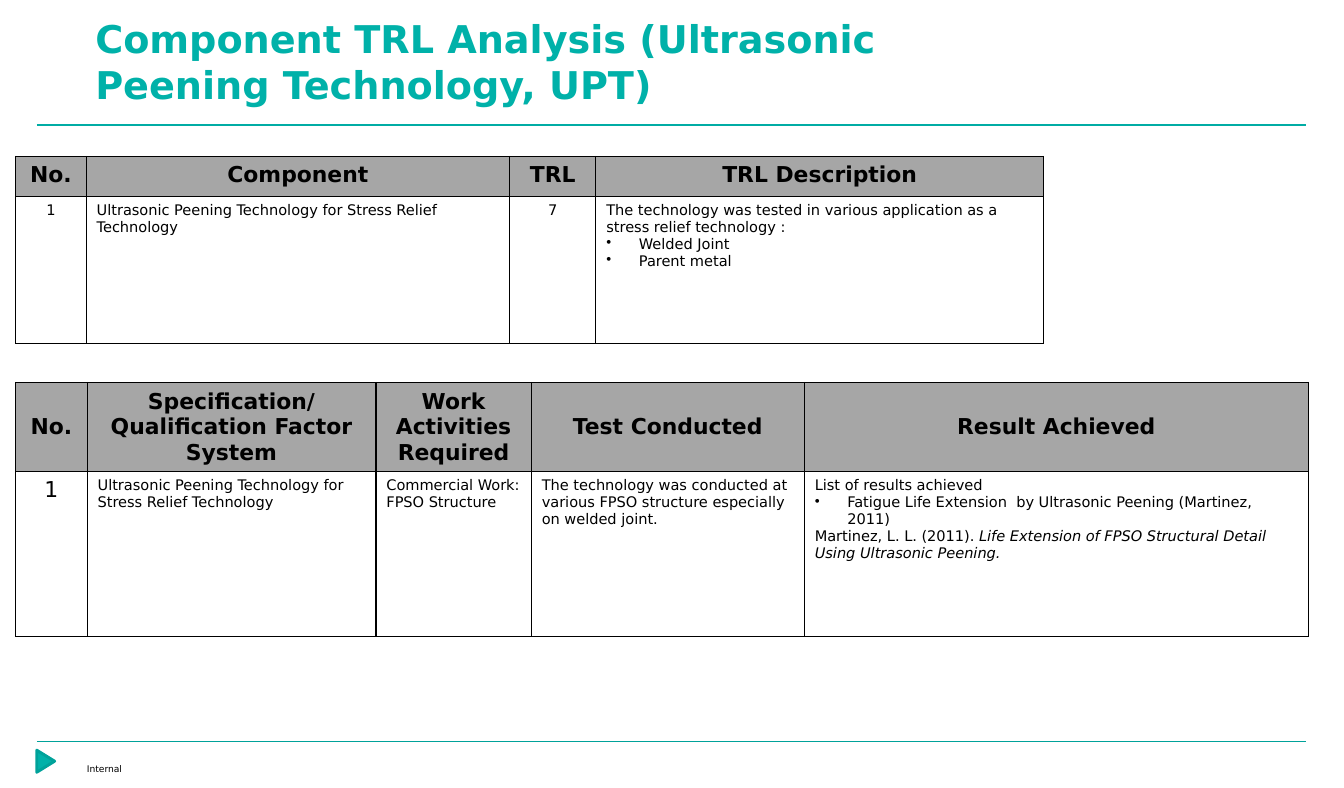
import pptx
import pptx.util
import pptx.dml.color
import pptx.enum.shapes
import pptx.enum.text
import pptx.oxml.ns
import lxml.etree

RGBColor = pptx.dml.color.RGBColor
Align = pptx.enum.text.PP_ALIGN
Anchor = pptx.enum.text.MSO_ANCHOR
qn = pptx.oxml.ns.qn

TEAL = RGBColor(0x00, 0xB1, 0xA9)
DARK_TEAL = RGBColor(0x00, 0xA2, 0x9A)
RULE_TEAL = RGBColor(0x00, 0xAC, 0xA4)
BLACK = RGBColor(0x00, 0x00, 0x00)
GRAY = RGBColor(0xA6, 0xA6, 0xA6)
FONT = "DejaVu Sans"

WIDTH = pptx.util.Inches(12.8)
HEIGHT = pptx.util.Inches(7.5)
COLUMN = WIDTH / 128
ROW = HEIGHT / 75
BULLET_INDENT = pptx.util.Inches(0.31)


def grid_box(left, top, width, height):
    return (round(left * COLUMN), round(top * ROW),
            round(width * COLUMN), round(height * ROW))


def add_bullet(paragraph):
    properties = paragraph._p.get_or_add_pPr()
    properties.set("marL", str(BULLET_INDENT))
    properties.set("indent", str(-BULLET_INDENT))
    lxml.etree.SubElement(properties, qn("a:buChar")).set("char", "•")


def write_text(paragraph, text, size=10, color=BLACK, bold=False,
               align=Align.LEFT, bullet=False, italic_tail=""):
    if bullet:
        add_bullet(paragraph)
    paragraph.alignment = align
    for content, italic in ((text, False), (italic_tail, True)):
        if content:
            run = paragraph.add_run()
            run.text = content
            run.font.name = FONT
            run.font.size = pptx.util.Pt(size)
            run.font.color.rgb = color
            run.font.bold = bold
            run.font.italic = italic


def add_label(slide, box, text, anchor=Anchor.TOP, **text_format):
    frame = slide.shapes.add_textbox(*box).text_frame
    frame.word_wrap = True
    frame.vertical_anchor = anchor
    write_text(frame.paragraphs[0], text, **text_format)


def add_rule(slide, box, color):
    left, top, width, height = box
    rule = slide.shapes.add_connector(
        pptx.enum.shapes.MSO_CONNECTOR.STRAIGHT, left, top, left + width, top + height)
    rule.line.color.rgb = color
    rule.line.width = pptx.util.Pt(0.75)
    lxml.etree.SubElement(rule._element.spPr, qn("a:effectLst"))


def add_borders(cell):
    properties = cell._tc.get_or_add_tcPr()
    for side in ("lnL", "lnR", "lnT", "lnB"):
        border = lxml.etree.SubElement(properties, qn("a:" + side))
        border.set("w", str(pptx.util.Pt(1)))
        fill = lxml.etree.SubElement(border, qn("a:solidFill"))
        lxml.etree.SubElement(fill, qn("a:srgbClr")).set("val", str(BLACK))


def fill_cell(cell, items, anchor=Anchor.TOP, color=None):
    add_borders(cell)
    if color is None:
        cell.fill.background()
    else:
        cell.fill.solid()
        cell.fill.fore_color.rgb = color
    cell.vertical_anchor = anchor
    frame = cell.text_frame
    for index, (text, text_format) in enumerate(items):
        paragraph = frame.add_paragraph() if index else frame.paragraphs[0]
        write_text(paragraph, text, **text_format)


def add_trl_table(slide, box, columns, rows, headings, contents, heading_anchor):
    table = slide.shapes.add_table(len(rows), len(columns), *box).table
    table.first_row = False
    table.horz_banding = False
    for column, share in zip(table.columns, columns):
        column.width = round(box[2] * share / sum(columns))
    for row, share in zip(table.rows, rows):
        row.height = round(box[3] * share / sum(rows))
    heading_format = dict(size=15, bold=True, align=Align.CENTER)
    for index, (heading, items) in enumerate(zip(headings, contents)):
        fill_cell(table.cell(0, index), [(heading, heading_format)], heading_anchor, GRAY)
        fill_cell(table.cell(1, index), items)


def add_header(slide, box):
    left, top, width, height = box
    add_label(slide, (left + round(4.6 * COLUMN), top, round(90 * COLUMN), round(height * 0.95)),
              "Component TRL Analysis (Ultrasonic Peening Technology, UPT)",
              anchor=Anchor.MIDDLE, size=26.2, color=TEAL, bold=True)
    add_rule(slide, (left, top + height, width, 0), RULE_TEAL)


def add_footer(slide, box):
    left, top, width, height = box
    add_rule(slide, (left, top, width, 0), DARK_TEAL)
    marker = slide.shapes.add_shape(
        pptx.enum.shapes.MSO_SHAPE.ISOSCELES_TRIANGLE,
        left - round(0.2 * COLUMN), top + round(ROW),
        round(2.1 * COLUMN), round(1.7 * ROW))
    marker.rotation = 90
    marker.shadow.inherit = False
    marker.fill.solid()
    marker.fill.fore_color.rgb = TEAL
    marker.line.color.rgb = DARK_TEAL
    marker.line.width = pptx.util.Pt(2)
    add_label(slide, (left + round(3.8 * COLUMN), top + round(1.6 * ROW),
                      round(113.4 * COLUMN), height - round(1.6 * ROW)),
              "Internal", size=6.3)


def add_component_table(slide, box):
    centered = dict(align=Align.CENTER)
    bullet = dict(bullet=True)
    add_trl_table(
        slide, box, (0.67, 4.03, 0.82, 4.26), (0.38, 1.4),
        ("No.", "Component", "TRL", "TRL Description"),
        ([("1", centered)],
         [("Ultrasonic Peening Technology for Stress Relief Technology", {})],
         [("7", centered)],
         [("The technology was tested in various application as a stress relief technology :", {}),
          ("Welded Joint", bullet),
          ("Parent metal", bullet)]),
        Anchor.TOP)


def add_result_table(slide, box):
    justified = dict(align=Align.JUSTIFY)
    add_trl_table(
        slide, box, (0.68, 2.75, 1.48, 2.6, 4.8), (0.84, 1.57),
        ("No.", "Specification/ Qualification Factor System",
         "Work Activities Required", "Test Conducted", "Result Achieved"),
        ([("1", dict(size=15, align=Align.CENTER))],
         [("Ultrasonic Peening Technology for Stress Relief Technology", {})],
         [("Commercial Work:", justified), ("FPSO Structure", justified)],
         [("The technology was conducted at various FPSO structure especially on welded joint.", {})],
         [("List of results achieved", {}),
          ("Fatigue Life Extension  by Ultrasonic Peening (Martinez, 2011)", dict(bullet=True)),
          ("Martinez, L. L. (2011). ", dict(
              italic_tail="Life Extension of FPSO Structural Detail Using Ultrasonic Peening."))]),
        Anchor.MIDDLE)


def main():
    presentation = pptx.Presentation()
    presentation.slide_width = WIDTH
    presentation.slide_height = HEIGHT
    slide = presentation.slides.add_slide(presentation.slide_layouts[6])
    add_header(slide, grid_box(3.5, 0.4, 120.9, 11.5))
    add_component_table(slide, grid_box(1.5, 14.9, 97.9, 17.8))
    add_result_table(slide, grid_box(1.5, 36.4, 123.1, 24.1))
    add_footer(slide, grid_box(3.5, 70.6, 120.9, 4.2))
    presentation.save("out.pptx")


if __name__ == "__main__":
    main()
